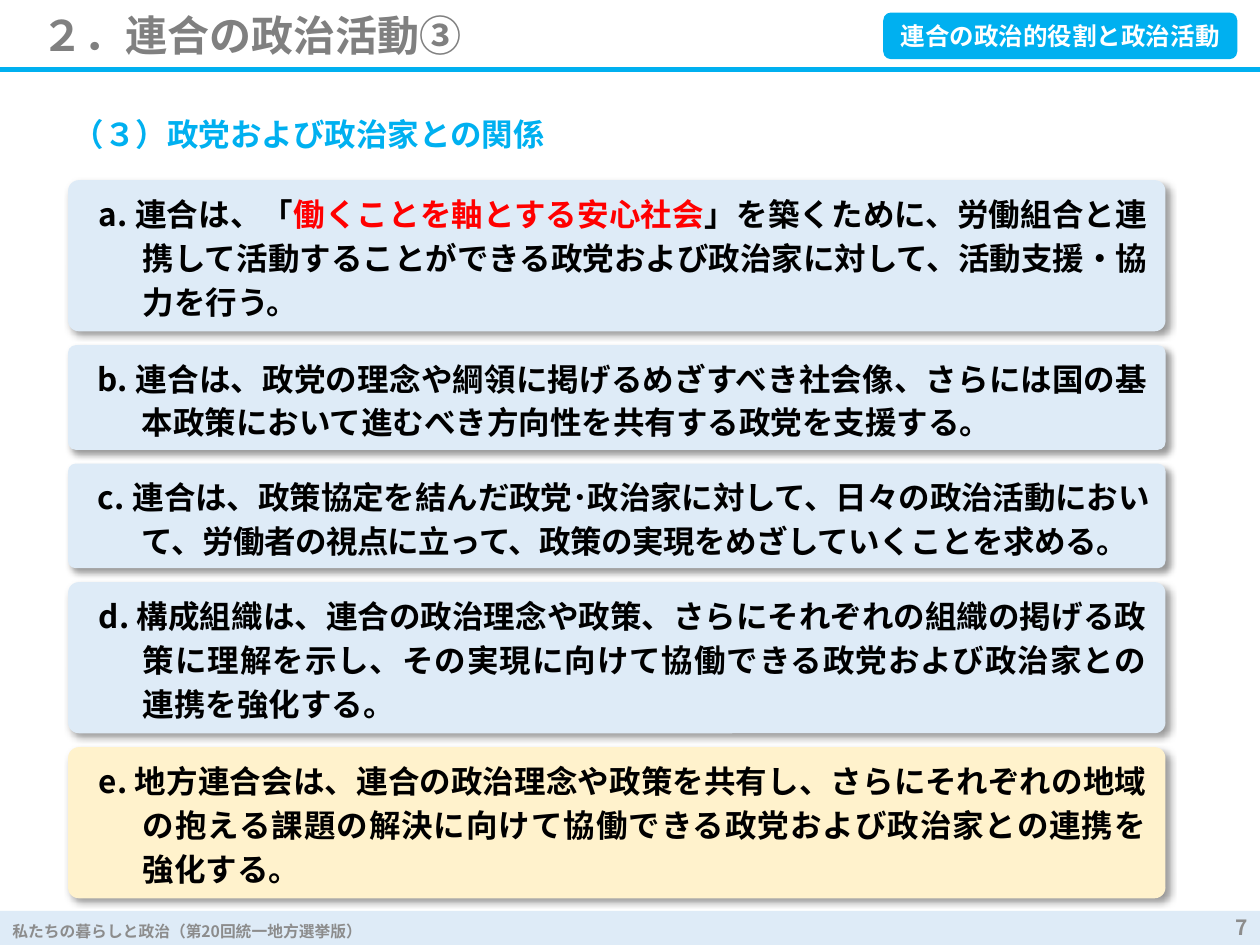
from lxml import etree
from pptx import Presentation
from pptx.dml.color import RGBColor
from pptx.enum.shapes import MSO_CONNECTOR, MSO_SHAPE
from pptx.enum.text import MSO_ANCHOR, MSO_AUTO_SIZE, PP_ALIGN
from pptx.oxml.ns import qn
from pptx.util import Inches, Pt

RECT, ROUNDED = MSO_SHAPE.RECTANGLE, MSO_SHAPE.ROUNDED_RECTANGLE
STRAIGHT = MSO_CONNECTOR.STRAIGHT
TOP, MIDDLE = MSO_ANCHOR.TOP, MSO_ANCHOR.MIDDLE
GROW, FIXED = MSO_AUTO_SIZE.SHAPE_TO_FIT_TEXT, MSO_AUTO_SIZE.NONE
LEFT, CENTER, RIGHT, JUSTIFY = PP_ALIGN.LEFT, PP_ALIGN.CENTER, PP_ALIGN.RIGHT, PP_ALIGN.JUSTIFY

FONT = "Noto Sans CJK JP"
SKY, PALE, CREAM = "00B0F0", "DEEBF7", "FFF2CC"
BLACK, RED, WHITE = "000000", "FF0000", "FFFFFF"
TITLE_GRAY, FOOTER_GRAY = "808080", "8C8C8C"

# Height, fill and runs (text, colour, letter spacing in points) of each policy
POLICIES = [
    (1.2, PALE, [
        ("a. 連合は、「", BLACK, 0),
        ("働くことを軸とする安心社会", RED, 0),
        ("」を築くために、労働組合と連携して活動することができる政党および政治家に対して、活動支援・協力を行う。", BLACK, 0)]),
    (0.83, PALE, [
        ("b. 連合は、政党の理念や綱領に掲げるめざすべき社会像、さらには国の基本政策において進むべき方向性を共有する政党を支援する。", BLACK, 0)]),
    (0.83, PALE, [
        ("c. ", BLACK, 0),
        ("連合は、政策協定を結んだ政党･政治家に対して、日々の政治活動において、労働者の視点に立って、政策の実現をめざしていくことを求める。", BLACK, -0.3)]),
    (1.2, PALE, [
        ("d. 構成組織は、連合の政治理念や政策、さらにそれぞれの組織の掲げる政策に理解を示し、その実現に向けて協働できる政党および政治家との連携を強化する。", BLACK, 0)]),
    (1.2, CREAM, [
        ("e. 地方連合会は、連合の政治理念や政策を共有し、さらにそれぞれの地域の抱える課題の解決に向けて協働できる政党および政治家との連携を強化する。", BLACK, 0)]),
]


def color(value):
    return RGBColor.from_string(value)


def write(shape, runs, size, align=LEFT, anchor=TOP, autofit=GROW,
          margins=(0.1, 0.05, 0.1, 0.05), line_spacing=None, indent=None):
    """Fill a shape with one paragraph of (text, colour, letter spacing) runs."""
    frame = shape.text_frame
    frame.word_wrap = True
    frame.auto_size = autofit
    frame.vertical_anchor = anchor
    (frame.margin_left, frame.margin_top,
     frame.margin_right, frame.margin_bottom) = map(Inches, margins)
    paragraph = frame.paragraphs[0]
    paragraph.alignment = align
    if line_spacing:
        paragraph.line_spacing = Pt(line_spacing)
    if indent:
        properties = paragraph._p.get_or_add_pPr()
        properties.set("marL", str(Inches(indent[0])))
        properties.set("indent", str(Inches(indent[1])))
    for text, fill, spacing in runs:
        run = paragraph.add_run()
        run.text = text
        run.font.name, run.font.size, run.font.bold = FONT, Pt(size), True
        run.font.color.rgb = color(fill)
        r_pr = run._r.get_or_add_rPr()
        etree.SubElement(r_pr, qn("a:ea"), typeface=FONT)
        if spacing:
            r_pr.set("spc", str(round(spacing * 100)))


def add_label(slide, box, text, size, fill, **layout):
    label = slide.shapes.add_textbox(*map(Inches, box))
    write(label, [(text, fill, 0)], size, **layout)


def add_block(slide, kind, box, fill):
    block = slide.shapes.add_shape(kind, *map(Inches, box))
    block.shadow.inherit = False
    block.fill.solid()
    block.fill.fore_color.rgb = color(fill)
    block.line.fill.background()
    return block


def add_drop_shadow(shape):
    effects = shape._element.spPr.find(qn("a:effectLst"))
    shadow = etree.SubElement(
        effects, qn("a:outerShdw"), blurRad=str(Pt(4)), dist=str(Pt(3)),
        dir=str(45 * 60000), algn="tl", rotWithShape="0")
    tint = etree.SubElement(shadow, qn("a:srgbClr"), val=BLACK)
    etree.SubElement(tint, qn("a:alpha"), val="40000")


def add_header(slide, left, top, width, height):
    # Rule under the title
    bottom = Inches(top + height)
    rule = slide.shapes.add_connector(
        STRAIGHT, Inches(left), bottom, Inches(left + width), bottom)
    rule.line.color.rgb = color(SKY)
    rule.line.width = Pt(3)
    etree.SubElement(rule._element.spPr, qn("a:effectLst"))
    # Title and chapter badge
    add_label(slide, (left + 0.23, top + 0.03, 5.63, 0.5),
              "２．連合の政治活動③", 24, TITLE_GRAY)
    badge_left = left + width - 2.99
    add_block(slide, ROUNDED, (badge_left, top + 0.1, 2.81, 0.37), SKY)
    add_label(slide, (badge_left, top + 0.12, 2.81, 0.34),
              "連合の政治的役割と政治活動", 14, WHITE, align=CENTER)


def add_policies(slide, left, top, width, gap):
    for height, fill, runs in POLICIES:
        panel = add_block(slide, ROUNDED, (left, top, width, height), fill)
        panel.adjustments[0] = 0.072
        add_drop_shadow(panel)
        write(panel, runs, 18, align=JUSTIFY, margins=(0.1, 0.05, 0.12, 0.05),
              line_spacing=25, indent=(0.47, -0.35))
        top += height + gap


def add_footer(slide, left, top, width, height):
    add_block(slide, RECT, (left, top, width, height), PALE)
    layout = dict(anchor=MIDDLE, autofit=FIXED, margins=(0.1, 0, 0.1, 0))
    add_label(slide, (left, top + 0.03, 3.38, 0.26),
              "私たちの暮らしと政治（第20回統一地方選挙版）", 9, FOOTER_GRAY, **layout)
    add_label(slide, (left + width - 2.25, top, 2.25, 0.26),
              "7", 12, FOOTER_GRAY, align=RIGHT, **layout)


def main():
    deck = Presentation()
    deck.slide_width, deck.slide_height = Inches(10), Inches(7.5)
    slide = deck.slides.add_slide(deck.slide_layouts[6])
    add_footer(slide, 0, 7.23, 10, 0.27)
    add_header(slide, 0, 0, 10, 0.55)
    # Section heading
    add_label(slide, (0.48, 0.86, 9.14, 0.41), "（３）政党および政治家との関係",
              18, SKY, line_spacing=22)
    add_policies(slide, 0.54, 1.43, 8.71, 0.11)
    deck.save("out.pptx")


if __name__ == "__main__":
    main()
